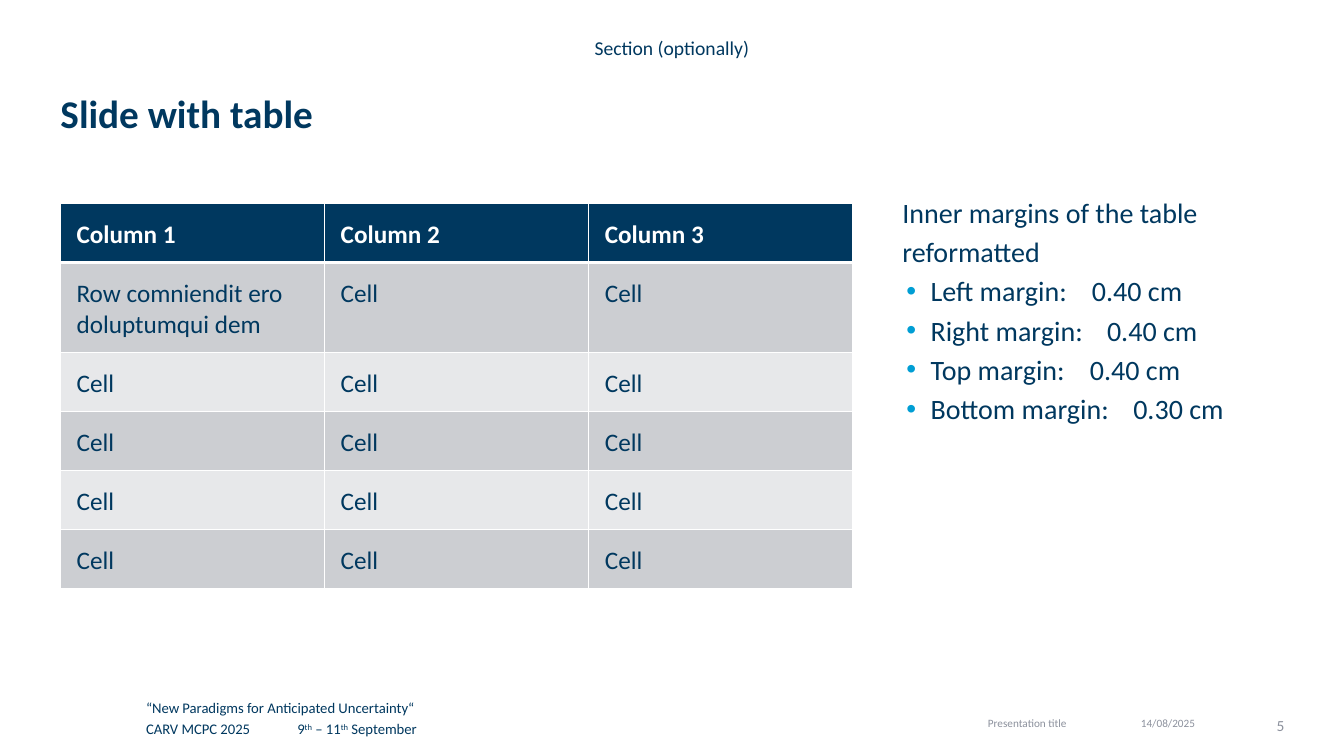
from dataclasses import dataclass

from lxml.etree import SubElement
from pptx import Presentation
from pptx.dml.color import RGBColor
from pptx.enum.text import MSO_ANCHOR, MSO_AUTO_SIZE, PP_ALIGN
from pptx.oxml.ns import qn
from pptx.util import Inches, Pt

NAVY, GREY, BLUE, WHITE = "00385F", "8C919D", "009ED4", "FFFFFF"
DARK, LIGHT = "CCCED2", "E7E8EA"
BULLET_LEFT, BULLET_HANG = 0.28, 0.24


@dataclass
class Margin:
    side: str
    size: str
    tab: float


@dataclass
class Footer:
    text: str
    left: float
    top: float
    width: float
    size: float
    inset: tuple
    align: PP_ALIGN


MARGINS = [
    Margin("Left", "0.40", 1.88),
    Margin("Right", "0.40", 2.03),
    Margin("Top", "0.40", 1.86),
    Margin("Bottom", "0.30", 2.29),
]
FOOTERS = [
    Footer("14/08/2025", 10.76, 7.06, 1.65, 8, (0, 0.05, 0, 0), PP_ALIGN.CENTER),
    Footer("Presentation title", 5.88, 7.06, 4.72, 8, (0, 0.05, 0.02, 0), PP_ALIGN.RIGHT),
    Footer("5", 12.42, 7.09, 0.32, 11, (0, 0.01, 0, 0), PP_ALIGN.RIGHT),
]
ROWS = [
    ["Column 1", "Column 2", "Column 3"],
    ["Row comniendit ero doluptumqui dem", "Cell", "Cell"],
] + [["Cell"] * 3 for _ in range(4)]


def rgb(color: str) -> RGBColor:
    return RGBColor.from_string(color)


def place(shape, left: float, top: float, width: float, height: float):
    shape.left, shape.top = Inches(left), Inches(top)
    shape.width, shape.height = Inches(width), Inches(height)
    return shape


def frame(shape, inset: tuple, anchor=MSO_ANCHOR.TOP):
    """Set the wrapping, insets and anchor of a shape's text."""
    box = shape.text_frame
    box.word_wrap, box.auto_size = True, MSO_AUTO_SIZE.NONE
    box.vertical_anchor = anchor
    box.margin_left, box.margin_top, box.margin_right, box.margin_bottom = map(Inches, inset)
    return box


def write(para, text: str, *, size: float, color: str = NAVY, bold: bool = False,
          align=PP_ALIGN.LEFT, line: float = 1.0, bullet: bool = False, tab: float = 0) -> None:
    """Fill a paragraph; text between ^ marks is raised."""
    props = para._p.get_or_add_pPr()
    props.set("marL", str(Inches(BULLET_LEFT if bullet else 0)))
    props.set("indent", str(-Inches(BULLET_HANG) if bullet else 0))
    para.alignment, para.line_spacing = align, line
    para.space_before = para.space_after = Pt(0)
    if bullet:
        para.level = 3
        tint = SubElement(props, qn("a:buClr"))
        SubElement(tint, qn("a:srgbClr"), val=BLUE)
        SubElement(props, qn("a:buFont"), typeface="Arial")
        SubElement(props, qn("a:buChar"), char="•")
    else:
        SubElement(props, qn("a:buNone"))
    if tab:
        stops = SubElement(props, qn("a:tabLst"))
        SubElement(stops, qn("a:tab"), pos=str(Inches(tab)), algn="l")
    for index, part in enumerate(text.split("^")):
        run = para.add_run()
        run.text = part
        font = run.font
        font.name, font.size, font.bold = "Calibri", Pt(size), bold
        font.color.rgb = rgb(color)
        if index % 2:
            font._element.set("baseline", "30000")


def border(cell, head: bool) -> None:
    """Draw white cell edges, with a thick one between header and body."""
    props = cell._tc.get_or_add_tcPr()
    for spot, side in enumerate(("lnL", "lnR", "lnT", "lnB")):
        width = 3 if head and side == "lnB" else 1
        edge = props.makeelement(qn(f"a:{side}"), {"w": str(Pt(width))})
        fill = SubElement(edge, qn("a:solidFill"))
        SubElement(fill, qn("a:srgbClr"), val=WHITE)
        props.insert(spot, edge)


def add_grid(slide) -> None:
    table = slide.shapes.add_table(
        len(ROWS), 3, Inches(0.6), Inches(2.02), Inches(7.87), Inches(3.75)).table
    for col in table.columns:
        col.width = Inches(2.62)
    for r, texts in enumerate(ROWS):
        table.rows[r].height = Inches(0.88 if r == 1 else 0.58)
        head = r == 0
        for c, text in enumerate(texts):
            cell = table.cell(r, c)
            cell.margin_left = cell.margin_right = cell.margin_top = Inches(0.16)
            cell.margin_bottom = Inches(0.12)
            cell.fill.solid()
            cell.fill.fore_color.rgb = rgb(NAVY if head else DARK if r % 2 else LIGHT)
            border(cell, head)
            write(cell.text_frame.paragraphs[0], text, size=18,
                  color=WHITE if head else NAVY, bold=head)


def add_notice(slide) -> None:
    shape = slide.shapes.add_textbox(Inches(1.35), Inches(6.85), Inches(3.19), Inches(0.51))
    box = frame(shape, (0.1, 0.05, 0.1, 0.05))
    write(box.paragraphs[0], "“New Paradigms for Anticipated Uncertainty“", size=10.5, line=1.2)
    write(box.add_paragraph(), "CARV MCPC 2025\t9^th^ – 11^th^ September",
          size=10.5, line=1.2, tab=1.42)


def add_footer(slide, item: Footer) -> None:
    shape = slide.shapes.add_textbox(
        Inches(item.left), Inches(item.top), Inches(item.width), Inches(0.16))
    write(frame(shape, item.inset).paragraphs[0], item.text,
          size=item.size, color=GREY, align=item.align)


def main() -> None:
    deck = Presentation()
    deck.slide_width, deck.slide_height = Inches(13.33), Inches(7.5)
    slide = deck.slides.add_slide(deck.slide_layouts[3])
    title, body, section = slide.placeholders

    add_notice(slide)
    box = frame(place(body, 8.95, 1.86, 3.78, 4.88), (0, 0.02, 0, 0))
    write(box.paragraphs[0], "Inner margins of the table reformatted", size=20, line=1.17)
    for item in MARGINS:
        write(box.add_paragraph(), f"{item.side} margin:\t{item.size} cm",
              size=20, line=1.17, bullet=True, tab=item.tab)

    box = frame(place(title, 0.6, 0.68, 12.13, 0.94), (0, 0, 0, 0), MSO_ANCHOR.MIDDLE)
    write(box.paragraphs[0], "Slide with table", size=28, bold=True, line=0.9)
    for item in FOOTERS:
        add_footer(slide, item)
    box = frame(place(section, 0.6, 0.29, 12.13, 0.31), (0, 0, 0, 0.01), MSO_ANCHOR.BOTTOM)
    write(box.paragraphs[0], "Section (optionally)", size=14, align=PP_ALIGN.CENTER, line=1.17)
    add_grid(slide)
    deck.save("out.pptx")


if __name__ == "__main__":
    main()
